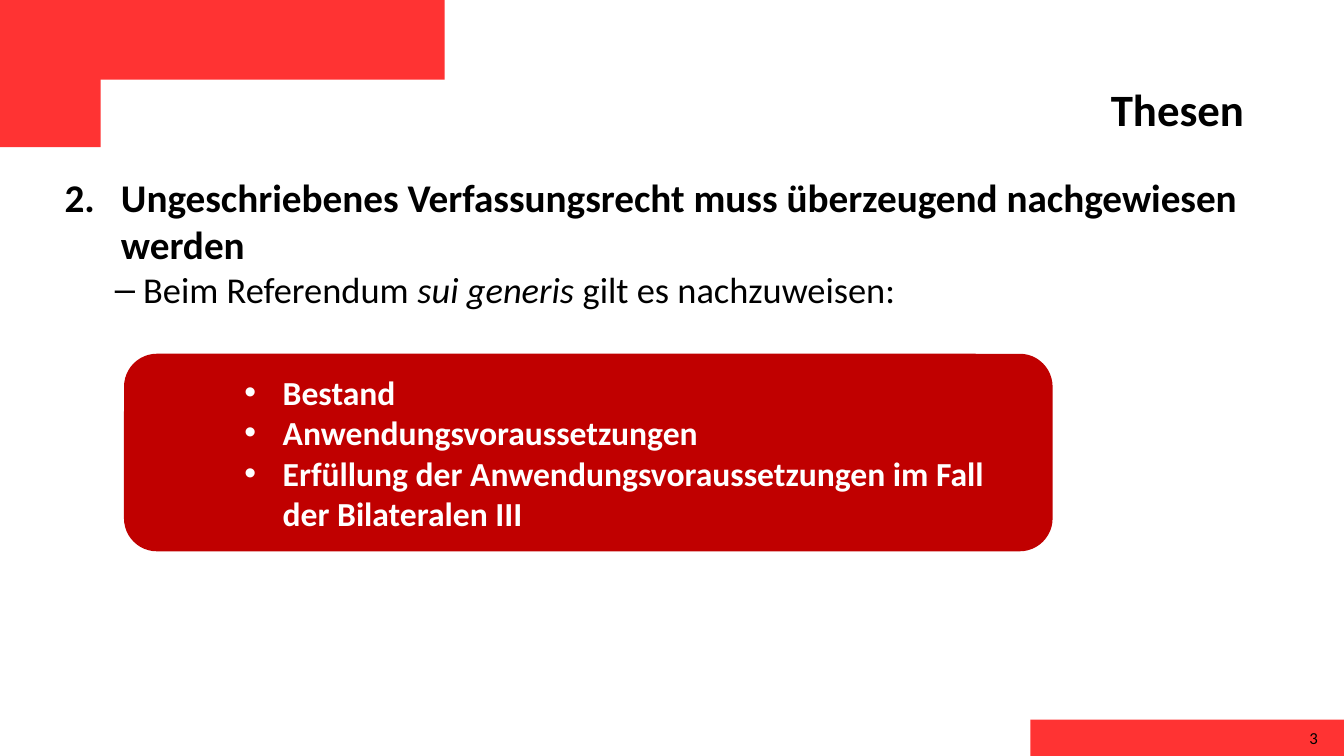
from dataclasses import dataclass

from lxml.etree import SubElement
from pptx import Presentation
from pptx.dml.color import RGBColor
from pptx.enum.shapes import MSO_SHAPE
from pptx.enum.text import MSO_ANCHOR, MSO_AUTO_SIZE, PP_ALIGN
from pptx.oxml.ns import qn
from pptx.util import Pt

EMU_PER_PX = 9144
FONT = "Calibri"
BLACK, WHITE = "000000", "FFFFFF"
BRIGHT_RED, DARK_RED = "FF3333", "C00000"


@dataclass(frozen=True)
class Box:
    left: int
    top: int
    width: int
    height: int


@dataclass(frozen=True)
class Bullet:
    margin: int
    hanging: int
    character: str = "•"
    start: int = 0


RED_BARS = [Box(0, 0, 441, 79), Box(0, 76, 100, 70), Box(1022, 714, 311, 36)]
TITLE = Box(292, 76, 952, 77)
BODY = Box(54, 167, 1211, 542)
CRITERIA = Box(123, 351, 921, 196)
PAGE_NUMBER = Box(1006, 712, 311, 40)

CRITERIA_TEXTS = [
    "Bestand",
    "Anwendungsvoraussetzungen",
    "Erfüllung der Anwendungsvoraussetzungen im Fall der Bilateralen III",
]


def px(length: int) -> int:
    return length * EMU_PER_PX


def place(shape, box: Box) -> None:
    shape.left, shape.top = px(box.left), px(box.top)
    shape.width, shape.height = px(box.width), px(box.height)


def set_fill(shape, colour: str) -> None:
    shape.fill.solid()
    shape.fill.fore_color.rgb = RGBColor.from_string(colour)


def add_block(slide, kind: MSO_SHAPE, box: Box, colour: str):
    shape = slide.shapes.add_shape(
        kind, px(box.left), px(box.top), px(box.width), px(box.height)
    )
    shape.shadow.inherit = False
    set_fill(shape, colour)
    shape.line.fill.background()
    return shape


def prepare_frame(shape, anchor: MSO_ANCHOR):
    frame = shape.text_frame
    frame.word_wrap = True
    frame.auto_size = MSO_AUTO_SIZE.NONE
    frame.vertical_anchor = anchor
    return frame


def set_bullet(paragraph, bullet: Bullet) -> None:
    properties = paragraph._p.get_or_add_pPr()
    properties.set("marL", str(px(bullet.margin)))
    properties.set("indent", str(-px(bullet.hanging)))
    if bullet.start:
        number = SubElement(properties, qn("a:buAutoNum"))
        number.set("type", "arabicPeriod")
        number.set("startAt", str(bullet.start))
    else:
        SubElement(properties, qn("a:buFont")).set("typeface", "Arial")
        SubElement(properties, qn("a:buChar")).set("char", bullet.character)


def write(
    paragraph,
    *texts: str,
    size: int,
    colour: str = BLACK,
    bold: bool = False,
    italic_text: str = "",
    alignment: PP_ALIGN = PP_ALIGN.LEFT,
    level: int = 0,
    bullet: Bullet | None = None,
) -> None:
    paragraph.level = level
    if bullet:
        set_bullet(paragraph, bullet)
    paragraph.alignment = alignment
    paragraph.space_before = Pt(0)
    paragraph.space_after = Pt(0)
    for text in texts:
        run = paragraph.add_run()
        run.text = text
        font = run.font
        font.name, font.size = FONT, Pt(size)
        font.bold, font.italic = bold, text == italic_text
        font.color.rgb = RGBColor.from_string(colour)


def add_title(slide) -> None:
    title = slide.shapes.title
    place(title, TITLE)
    frame = prepare_frame(title, MSO_ANCHOR.TOP)
    write(frame.paragraphs[0], "Thesen", size=32, bold=True, alignment=PP_ALIGN.RIGHT)


def add_body(slide) -> None:
    body = slide.placeholders[1]
    place(body, BODY)
    set_fill(body, WHITE)
    frame = prepare_frame(body, MSO_ANCHOR.TOP)
    write(
        frame.paragraphs[0],
        "Ungeschriebenes Verfassungsrecht muss überzeugend nachgewiesen werden",
        size=28,
        bold=True,
        bullet=Bullet(56, 56, start=2),
    )
    write(
        frame.add_paragraph(),
        "Beim Referendum ",
        "sui generis ",
        "gilt es nachzuweisen:",
        size=26,
        italic_text="sui generis ",
        level=1,
        bullet=Bullet(78, 28, "–"),
    )


def add_criteria(slide) -> None:
    panel = add_block(slide, MSO_SHAPE.ROUNDED_RECTANGLE, CRITERIA, DARK_RED)
    frame = prepare_frame(panel, MSO_ANCHOR.MIDDLE)
    for index, text in enumerate(CRITERIA_TEXTS):
        paragraph = frame.add_paragraph() if index else frame.paragraphs[0]
        write(
            paragraph,
            text,
            size=24,
            colour=WHITE,
            bold=True,
            level=2,
            bullet=Bullet(138, 38),
        )


def add_page_number(slide) -> None:
    box = PAGE_NUMBER
    number = slide.shapes.add_textbox(
        px(box.left), px(box.top), px(box.width), px(box.height)
    )
    frame = prepare_frame(number, MSO_ANCHOR.MIDDLE)
    write(frame.paragraphs[0], "3", size=12, alignment=PP_ALIGN.RIGHT)


def main() -> None:
    presentation = Presentation()
    presentation.slide_width, presentation.slide_height = px(1333), px(750)
    slide = presentation.slides.add_slide(presentation.slide_layouts[1])
    add_title(slide)
    add_body(slide)
    for bar in RED_BARS:
        add_block(slide, MSO_SHAPE.RECTANGLE, bar, BRIGHT_RED)
    add_criteria(slide)
    add_page_number(slide)
    presentation.save("out.pptx")


if __name__ == "__main__":
    main()
